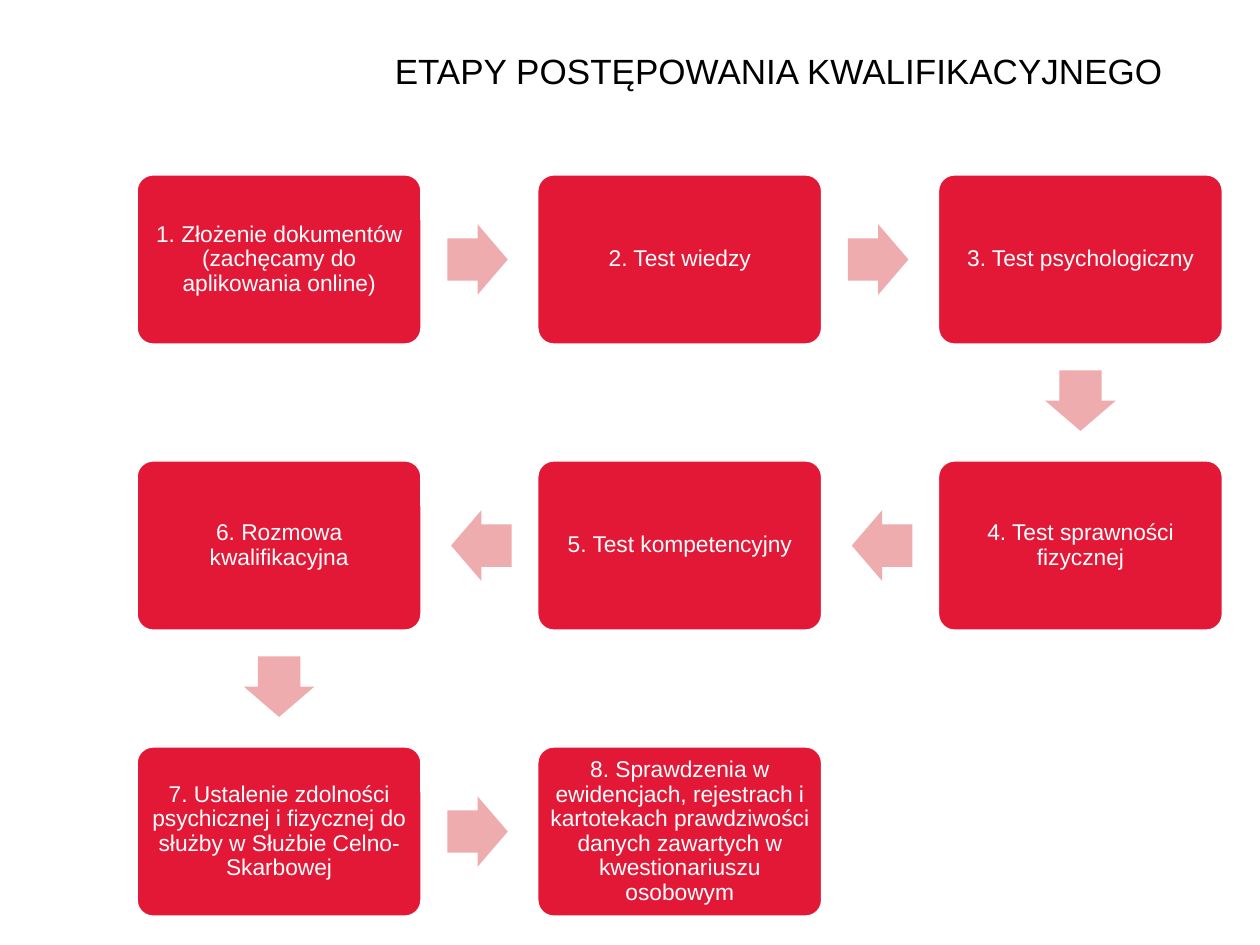
from pptx import Presentation
from pptx.dml.color import RGBColor
from pptx.enum import shapes, text
from pptx.util import Inches, Pt

STEPS = [
    "1. Złożenie dokumentów (zachęcamy do aplikowania online)",
    "2. Test wiedzy",
    "3. Test psychologiczny",
    "4. Test sprawności fizycznej",
    "5. Test kompetencyjny",
    "6. Rozmowa kwalifikacyjna",
    "7. Ustalenie zdolności psychicznej i fizycznej do służby w Służbie Celno-Skarbowej",
    "8. Sprawdzenia w ewidencjach, rejestrach i kartotekach prawdziwości danych "
    "zawartych w kwestionariuszu osobowym",
]
COLUMNS = 3
LEFT, TOP = 1.08, 1.38
STEP_X, STEP_Y = 3.18, 2.27
BOX_W, BOX_H = 2.27, 1.36
ARROW_W, ARROW_H, ARROW_GAP = 0.48, 0.56, 0.2


def style_paragraph(p, size, color):
    p.alignment = text.PP_ALIGN.CENTER
    p.font.name = "Arial"
    p.font.size = Pt(size)
    p.font.color.rgb = RGBColor.from_string(color)


def add_filled(kind, x, y, w, h, color):
    sp = s.shapes.add_shape(kind, Inches(x), Inches(y), Inches(w), Inches(h))
    sp.shadow.inherit = False
    sp.fill.solid()
    sp.fill.fore_color.rgb = RGBColor.from_string(color)
    return sp


prs = Presentation()
prs.slide_width, prs.slide_height = Inches(10), Inches(7.5)
s = prs.slides.add_slide(prs.slide_layouts[5])

title = s.shapes.title
title.left, title.top = Inches(2.6), Inches(0.3)
title.width, title.height = Inches(7.16), Inches(0.77)
tf = title.text_frame
tf.text = "ETAPY POSTĘPOWANIA KWALIFIKACYJNEGO"
tf.vertical_anchor = text.MSO_ANCHOR.MIDDLE
tf.margin_bottom = Inches(0.3)
style_paragraph(tf.paragraphs[0], 20, "000000")

# The steps snake: odd rows run from right to left.
for n, step in enumerate(STEPS):
    row, place = divmod(n, COLUMNS)
    forward = row % 2 == 0
    col = place if forward else COLUMNS - 1 - place
    x, y = LEFT + col * STEP_X, TOP + row * STEP_Y

    box = add_filled(shapes.MSO_SHAPE.ROUNDED_RECTANGLE, x, y, BOX_W, BOX_H, "E31837")
    box.adjustments[0] = 0.1
    box.line.color.rgb = RGBColor.from_string("FFFFFF")
    box.line.width = Pt(2)
    tf = box.text_frame
    tf.text = step
    tf.word_wrap = True
    tf.vertical_anchor = text.MSO_ANCHOR.MIDDLE
    tf.margin_left = tf.margin_right = tf.margin_top = tf.margin_bottom = Inches(0.05)
    p = tf.paragraphs[0]
    p.line_spacing = 0.9
    style_paragraph(p, 13, "FFFFFF")

    if n == len(STEPS) - 1:
        break
    if place == COLUMNS - 1:
        dx, dy, angle = 0, 1, 90
    elif forward:
        dx, dy, angle = 1, 0, 0
    else:
        dx, dy, angle = -1, 0, 180
    reach = ARROW_GAP + ARROW_W / 2
    center_x = x + BOX_W / 2 + dx * (BOX_W / 2 + reach)
    center_y = y + BOX_H / 2 + dy * (BOX_H / 2 + reach)
    arrow = add_filled(shapes.MSO_SHAPE.RIGHT_ARROW, center_x - ARROW_W / 2,
                       center_y - ARROW_H / 2, ARROW_W, ARROW_H, "EFACAE")
    arrow.adjustments[0] = 0.6
    arrow.adjustments[1] = 0.5
    arrow.line.fill.background()
    arrow.rotation = angle

prs.save("out.pptx")
